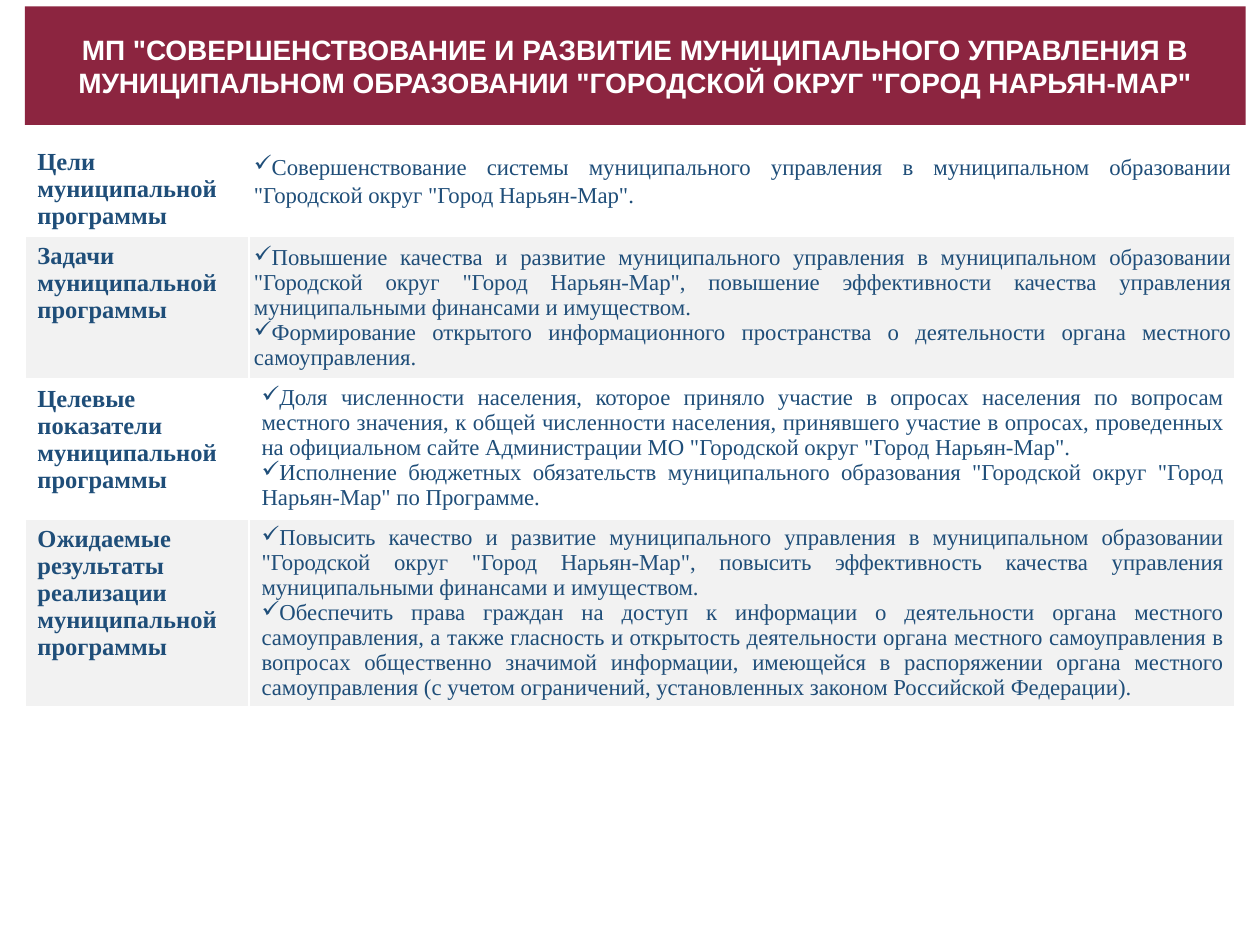
from lxml import etree
from pptx import Presentation
from pptx.dml.color import RGBColor
from pptx.enum.text import MSO_ANCHOR, MSO_AUTO_SIZE, PP_ALIGN
from pptx.oxml.ns import qn
from pptx.util import Cm, Pt

CENTER, LEFT, JUSTIFY = PP_ALIGN.CENTER, PP_ALIGN.LEFT, PP_ALIGN.JUSTIFY
MIDDLE, NO_FIT = MSO_ANCHOR.MIDDLE, MSO_AUTO_SIZE.NONE
TITLE_ONLY = 5

COLORS = {"banner": "8C2540", "white": "FFFFFF", "band": "F2F2F2", "text": "1F4E79"}
FORMATS = {
    "title": {"name": "Arial", "size": Pt(16), "bold": True},
    "heading": {"name": "Times New Roman", "size": Pt(14), "bold": True},
    "item": {"name": "Times New Roman", "size": Pt(13), "bold": False},
}
TIGHT_MARGINS = {"margin_left": Cm(0.1), "margin_right": Cm(0.1),
                 "margin_top": Cm(0.18), "margin_bottom": Cm(0.18)}

TITLE = ('МП "СОВЕРШЕНСТВОВАНИЕ И РАЗВИТИЕ МУНИЦИПАЛЬНОГО УПРАВЛЕНИЯ В '
         'МУНИЦИПАЛЬНОМ ОБРАЗОВАНИИ "ГОРОДСКОЙ ОКРУГ "ГОРОД НАРЬЯН-МАР"')

# Row heading, row height in cm, margins of the list cell, line spacing, items
PROGRAM = [
    ("Цели муниципальной программы", 1.78, TIGHT_MARGINS, 1.15, [
        'Совершенствование системы муниципального управления в муниципальном '
        'образовании "Городской округ "Город Нарьян-Мар".',
    ]),
    ("Задачи муниципальной программы", 1.88, TIGHT_MARGINS, 1.0, [
        'Повышение качества и развитие муниципального управления в муниципальном '
        'образовании "Городской округ "Город Нарьян-Мар", повышение эффективности '
        'качества управления муниципальными финансами и имуществом.',
        'Формирование открытого информационного пространства о деятельности органа '
        'местного самоуправления.',
    ]),
    ("Целевые показатели муниципальной программы", 2.82, {}, 1.0, [
        'Доля численности населения, которое приняло участие в опросах населения по '
        'вопросам местного значения, к общей численности населения, принявшего участие '
        'в опросах, проведенных на официальном сайте Администрации МО "Городской округ '
        '"Город Нарьян-Мар".',
        'Исполнение бюджетных обязательств муниципального образования "Городской округ '
        '"Город Нарьян-Мар" по Программе.',
    ]),
    ("Ожидаемые результаты реализации муниципальной программы", 3.33, {}, 1.0, [
        'Повысить качество и развитие муниципального управления в муниципальном '
        'образовании "Городской округ "Город Нарьян-Мар", повысить эффективность '
        'качества управления муниципальными финансами и имуществом.',
        'Обеспечить права граждан на доступ к информации о деятельности органа местного '
        'самоуправления, а также гласность и открытость деятельности органа местного '
        'самоуправления в вопросах общественно значимой информации, имеющейся в '
        'распоряжении органа местного самоуправления (с учетом ограничений, '
        'установленных законом Российской Федерации).',
    ]),
]


def set_attributes(target, values):
    for attribute, value in values.items():
        setattr(target, attribute, value)


def set_fill(target, color):
    target.fill.solid()
    target.fill.fore_color.rgb = RGBColor.from_string(COLORS[color])


def write_paragraph(paragraph, text, style, color, align):
    paragraph.text = text
    paragraph.alignment = align
    set_attributes(paragraph.font, FORMATS[style])
    paragraph.font.color.rgb = RGBColor.from_string(COLORS[color])


def add_check_mark(paragraph):
    properties = paragraph._p.get_or_add_pPr()
    properties.set("marL", "0")
    properties.set("indent", "0")
    etree.SubElement(properties, qn("a:buChar")).set("char", "✓")


def add_borders(cell, color):
    properties = cell._tc.get_or_add_tcPr()
    for side in ("L", "R", "T", "B"):
        line = etree.SubElement(properties, qn(f"a:ln{side}"), w=str(Pt(1)))
        fill = etree.SubElement(line, qn("a:solidFill"))
        etree.SubElement(fill, qn("a:srgbClr"), val=COLORS[color])


def build_banner(slide, left, top, width, height):
    banner = slide.shapes.title
    set_attributes(banner, {"left": left, "top": top, "width": width, "height": height})
    set_fill(banner, "banner")
    frame = banner.text_frame
    set_attributes(frame, {"word_wrap": True, "auto_size": NO_FIT,
                           "vertical_anchor": MIDDLE})
    write_paragraph(frame.paragraphs[0], TITLE, "title", "white", CENTER)


def build_program_table(slide, left, top, width, height):
    graphic = slide.shapes.add_table(len(PROGRAM), 2, left, top, width, height)
    table = graphic.table
    heading_width = Cm(4.52)
    table.columns[0].width = heading_width
    table.columns[1].width = width - heading_width

    for index, (heading, row_height, margins, spacing, items) in enumerate(PROGRAM):
        row = table.rows[index]
        row.height = Cm(row_height)
        heading_cell, list_cell = row.cells
        for cell in (heading_cell, list_cell):
            add_borders(cell, "white")
            set_fill(cell, "band" if index % 2 else "white")

        write_paragraph(heading_cell.text_frame.paragraphs[0], heading,
                        "heading", "text", LEFT)

        set_attributes(list_cell, margins)
        frame = list_cell.text_frame
        for number, item in enumerate(items):
            paragraph = frame.add_paragraph() if number else frame.paragraphs[0]
            paragraph.line_spacing = spacing
            add_check_mark(paragraph)
            write_paragraph(paragraph, item, "item", "text", JUSTIFY)

    # The rows share out the rest of the frame height
    graphic.height = height


def main():
    presentation = Presentation()
    presentation.slide_width, presentation.slide_height = Cm(25.4), Cm(19.05)
    slide = presentation.slides.add_slide(presentation.slide_layouts[TITLE_ONLY])
    left = Cm(0.5)
    build_program_table(slide, left, Cm(2.87), Cm(24.4), Cm(12.47))
    build_banner(slide, left, Cm(0.13), Cm(24.61), Cm(2.39))
    presentation.save("out.pptx")


if __name__ == "__main__":
    main()
